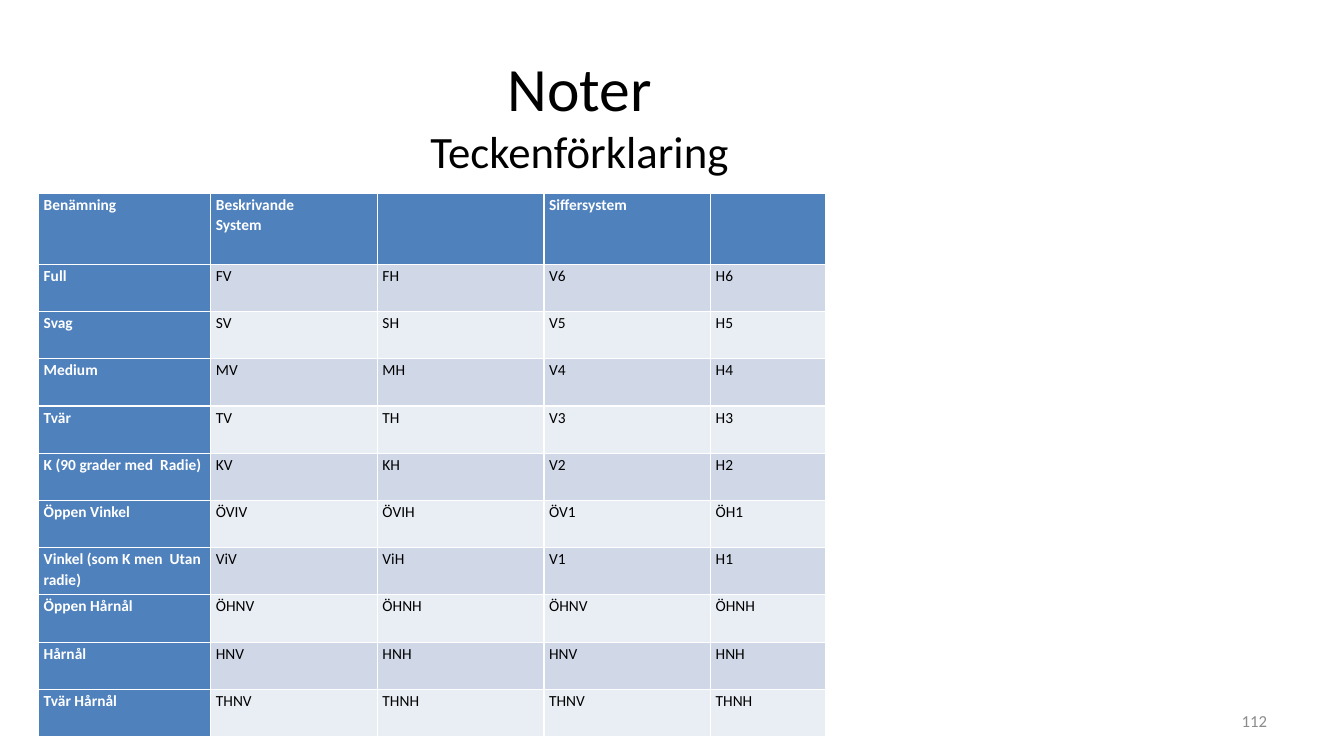
import pptx
import pptx.util
import pptx.dml.color
import pptx.enum.text

Pt = pptx.util.Pt
RGBColor = pptx.dml.color.RGBColor
PP_ALIGN = pptx.enum.text.PP_ALIGN
MIDDLE = pptx.enum.text.MSO_ANCHOR.MIDDLE

HEADING, SUBHEADING = "Noter", "Teckenförklaring"
PAGE_NUMBER = "112"
NOTE_ROWS = [
    ("Benämning", "Beskrivande\nSystem", "", "Siffersystem", ""),
    ("Full", "FV", "FH", "V6", "H6"),
    ("Svag", "SV", "SH", "V5", "H5"),
    ("Medium", "MV", "MH", "V4", "H4"),
    ("Tvär", "TV", "TH", "V3", "H3"),
    ("K (90 grader med  Radie)", "KV", "KH", "V2", "H2"),
    ("Öppen Vinkel", "ÖVIV", "ÖVIH", "ÖV1", "ÖH1"),
    ("Vinkel (som K men  Utan radie)", "ViV", "ViH", "V1", "H1"),
    ("Öppen Hårnål", "ÖHNV", "ÖHNH", "ÖHNV", "ÖHNH"),
    ("Hårnål", "HNV", "HNH", "HNV", "HNH"),
    ("Tvär Hårnål", "THNV", "THNH", "THNV", "THNH"),
]
COLUMN_WIDTHS = (123, 119, 119, 119, 82)
HEADER_HEIGHT, ROW_HEIGHT = 50.6, 33.75

FONT = "Calibri"
BLACK = RGBColor(0x00, 0x00, 0x00)
WHITE = RGBColor(0xFF, 0xFF, 0xFF)
GRAY = RGBColor(0x8C, 0x8C, 0x8C)
BLUE = RGBColor(0x4F, 0x81, 0xBD)
BANDS = (RGBColor(0xE9, 0xED, 0xF4), RGBColor(0xD0, 0xD8, 0xE8))


def style_run(run, size, color, bold=False):
    run.font.name = FONT
    run.font.size = Pt(size)
    run.font.color.rgb = color
    run.font.bold = bold


def place(shape, left, top, width, height):
    shape.left, shape.top = Pt(left), Pt(top)
    shape.width, shape.height = Pt(width), Pt(height)


def fill_cell(cell, text, is_heading, band):
    cell.fill.solid()
    cell.fill.fore_color.rgb = BLUE if is_heading else band
    cell.margin_left, cell.margin_right = Pt(3.6), Pt(5.4)
    cell.margin_top, cell.margin_bottom = Pt(0.7), Pt(0)
    cell.text_frame.text = text
    for paragraph in cell.text_frame.paragraphs:
        paragraph.line_spacing = 1.07
        for run in paragraph.runs:
            style_run(run, 11, WHITE if is_heading else BLACK, is_heading)


def add_title(slide):
    title = slide.shapes.title
    place(title, 0, 28.8, 828, 104.4)
    title.text_frame.vertical_anchor = MIDDLE
    title.text_frame.text = f"{HEADING}\v{SUBHEADING}"
    paragraph = title.text_frame.paragraphs[0]
    paragraph.alignment = PP_ALIGN.CENTER
    for run, size in zip(paragraph.runs, (44, 32)):
        style_run(run, size, BLACK)


def add_note_table(slide):
    height = HEADER_HEIGHT + ROW_HEIGHT * (len(NOTE_ROWS) - 1)
    notes = slide.shapes.add_table(
        len(NOTE_ROWS), len(COLUMN_WIDTHS),
        Pt(27.6), Pt(138.2), Pt(sum(COLUMN_WIDTHS)), Pt(height)).table
    notes.first_col = True
    for column, width in zip(notes.columns, COLUMN_WIDTHS):
        column.width = Pt(width)
    for r, texts in enumerate(NOTE_ROWS):
        notes.rows[r].height = Pt(ROW_HEIGHT if r else HEADER_HEIGHT)
        for c, text in enumerate(texts):
            fill_cell(notes.cell(r, c), text, r == 0 or c == 0, BANDS[r % 2])


def add_page_number(slide):
    number = slide.shapes.add_textbox(Pt(688.3), Pt(500.4), Pt(224), Pt(28.8))
    number.text_frame.word_wrap = True
    number.text_frame.vertical_anchor = MIDDLE
    number.text_frame.text = PAGE_NUMBER
    paragraph = number.text_frame.paragraphs[0]
    paragraph.alignment = PP_ALIGN.RIGHT
    style_run(paragraph.runs[0], 12, GRAY)


def main():
    prs = pptx.Presentation()
    prs.slide_width, prs.slide_height = Pt(960), Pt(540)
    slide = prs.slides.add_slide(prs.slide_layouts.get_by_name("Title Only"))
    add_title(slide)
    add_note_table(slide)
    add_page_number(slide)
    prs.save("out.pptx")


if __name__ == "__main__":
    main()
